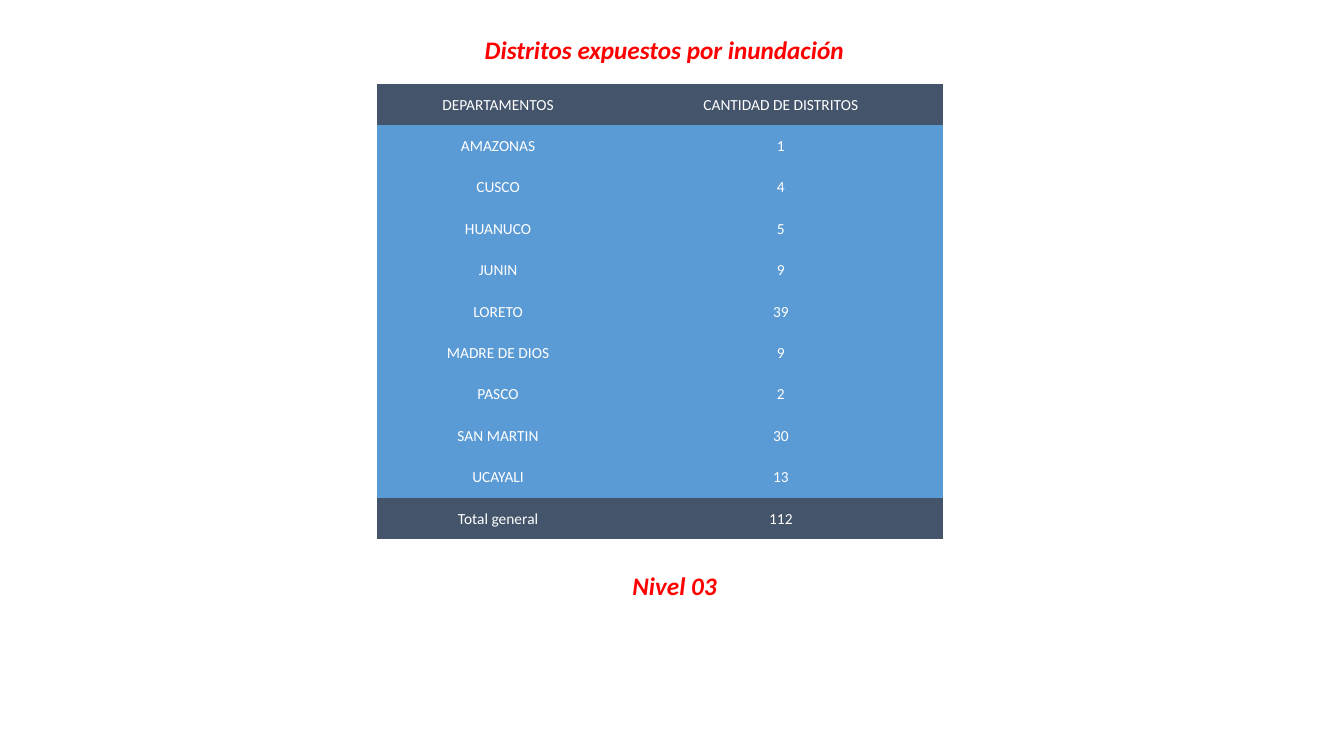
from pptx import Presentation
from pptx.dml.color import RGBColor
from pptx.enum.text import MSO_ANCHOR, MSO_AUTO_SIZE, PP_ALIGN
from pptx.oxml.ns import qn
from pptx.util import Inches, Pt

CENTER = PP_ALIGN.CENTER
TOP, MIDDLE = MSO_ANCHOR.TOP, MSO_ANCHOR.MIDDLE
FIXED = MSO_AUTO_SIZE.NONE
TITLE_ONLY = 5
NO_GRID = "{2D5ABB26-0587-4C30-8999-92F81FD0307C}"
COLORS = {"red": "FF0000", "white": "FFFFFF", "dark": "44546A", "blue": "5B9BD5"}

ROWS = [
    ("DEPARTAMENTOS", "CANTIDAD DE DISTRITOS"),
    ("AMAZONAS", "1"),
    ("CUSCO", "4"),
    ("HUANUCO", "5"),
    ("JUNIN", "9"),
    ("LORETO", "39"),
    ("MADRE DE DIOS", "9"),
    ("PASCO", "2"),
    ("SAN MARTIN", "30"),
    ("UCAYALI", "13"),
    ("Total general", "112"),
]


class Page:
    """Style and current slide; lengths are percentages of the slide size."""

    font = "Calibri"

    def __init__(self, deck):
        self.wide, self.high = deck.slide_width, deck.slide_height
        self.slide = deck.slides.add_slide(deck.slide_layouts[TITLE_ONLY])

    def box(self, left, top, width, height):
        """Turn percentages into slide lengths."""
        return (int(self.wide * left / 100), int(self.high * top / 100),
                int(self.wide * width / 100), int(self.high * height / 100))

    def add_text(self, frame, text, size, color, strong=False):
        para = frame.paragraphs[0]
        para.alignment = CENTER
        run = para.add_run()
        run.text = text
        font = run.font
        font.name, font.size = self.font, Pt(size)
        font.bold = font.italic = strong
        font.color.rgb = RGBColor.from_string(COLORS[color])

    def label(self, shape, text, wrap):
        frame = shape.text_frame
        frame.auto_size, frame.word_wrap = FIXED, wrap
        frame.vertical_anchor = TOP
        self.add_text(frame, text, 18, "red", strong=True)

    def title(self, text, *area):
        shape = self.slide.shapes.title
        shape.left, shape.top, shape.width, shape.height = self.box(*area)
        self.label(shape, text, wrap=False)

    def note(self, text, *area):
        self.label(self.slide.shapes.add_textbox(*self.box(*area)), text, wrap=True)

    def table(self, rows, shares, left, top, height):
        """Draw rows with a dark first and last row; shares are column widths."""
        area = self.box(left, top, sum(shares), height)
        table = self.slide.shapes.add_table(len(rows), len(shares), *area).table
        table.first_row = table.horz_banding = False
        table._tbl.tblPr.find(qn("a:tableStyleId")).text = NO_GRID
        for col, share in zip(table.columns, shares):
            col.width = int(self.wide * share / 100)
        for r, row in enumerate(rows):
            table.rows[r].height = area[3] // len(rows)
            fill = "dark" if r in (0, len(rows) - 1) else "blue"
            for c, text in enumerate(row):
                self.cell(table.cell(r, c), text, fill)

    def cell(self, cell, text, fill):
        cell.margin_left = cell.margin_right = cell.margin_top = Inches(0.01)
        cell.margin_bottom = 0
        cell.vertical_anchor = MIDDLE
        cell.fill.solid()
        cell.fill.fore_color.rgb = RGBColor.from_string(COLORS[fill])
        self.add_text(cell.text_frame, text, 11, "white")


def main():
    deck = Presentation()
    deck.slide_width, deck.slide_height = Inches(13.33), Inches(7.5)
    page = Page(deck)
    page.title("Distritos expuestos por inundación", 35.18, 3.87, 28.5, 5.33)
    page.note("Nivel 03", 45.69, 74.8, 9, 5.33)
    page.table(ROWS, (18, 24.08), 28.06, 11.07, 60.27)
    deck.save("out.pptx")


if __name__ == "__main__":
    main()
